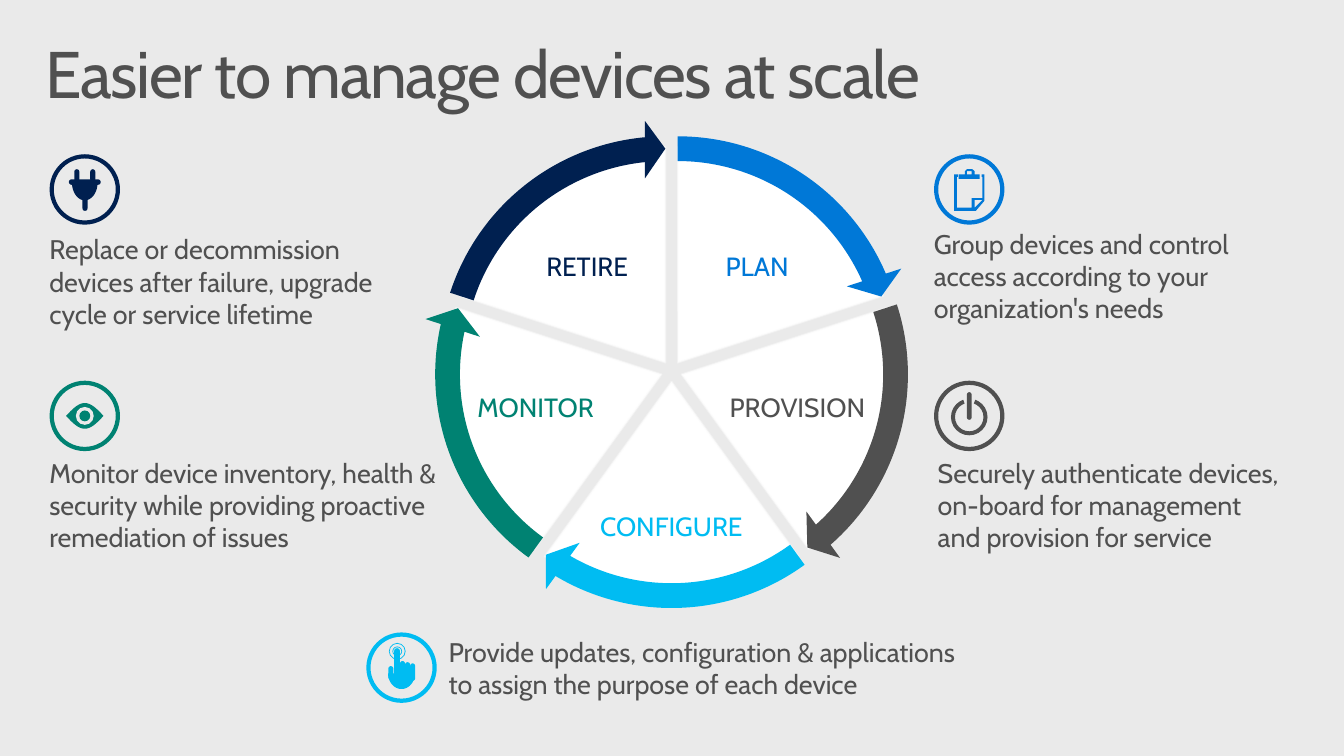
from math import cos, pi, radians, sin

from lxml import etree
from pptx import Presentation, util as u
from pptx.dml.color import RGBColor
from pptx.enum import shapes, text
from pptx.oxml.ns import qn

SHAPE = shapes.MSO_SHAPE
FONT = "Cabin"
BACK, GREY, BLUE, SKY, TEAL, NAVY = (
    "EAEAEA", "505050", "0078D7", "00BCF2", "008272", "002050")

HUB = (17.26, 9.54)
STEP = 72       # degrees per stage
HEAD = 5.46     # degrees taken by an arrowhead
DEG = 0.6       # one degree as an adjustment value

# Stage, colour, label box (cm), clockwise from the top
STAGES = [
    ("plan", BLUE, (17.15, 6.3, 4.62, 1.09)),
    ("provision", GREY, (18.36, 9.86, 4.27, 1.19)),
    ("configure", SKY, (15.21, 12.85, 4.09, 1.32)),
    ("monitor", TEAL, (11.63, 9.86, 4.27, 1.19)),
    ("retire", NAVY, (12.78, 6.3, 4.62, 1.09)),
]
NOTES = [
    ("Group devices and control access according to your organization's needs",
     (24, 5.84, 9.07, 2.51)),
    ("Securely authenticate devices, on-board for management and provision for service",
     (24.1, 11.73, 8.97, 2.51)),
    ("Provide updates, configuration & applications to assign the purpose of each device",
     (11.53, 16.33, 13.59, 1.68)),
    ("Monitor device inventory, health & security while providing proactive "
     "remediation of issues", (1.27, 11.73, 10.03, 2.51)),
    ("Replace or decommission devices after failure, upgrade cycle or service lifetime",
     (1.27, 5.99, 9.6, 2.51)),
]


def rgb(value):
    return RGBColor.from_string(value)


def paint(sp, color):
    sp.shadow.inherit = False
    sp.fill.solid()
    sp.fill.fore_color.rgb = rgb(color)
    sp.line.fill.background()
    return sp


def add_text(s, words, box, size=19.6, color=GREY, inset=(0, 0), align=None,
             anchor=text.MSO_ANCHOR.TOP, spacing=None, **run_attrs):
    tf = s.shapes.add_textbox(*map(u.Cm, box)).text_frame
    tf.word_wrap = True
    tf.vertical_anchor = anchor
    tf.margin_left = tf.margin_right = u.Cm(inset[0])
    tf.margin_top = tf.margin_bottom = u.Cm(inset[1])
    p = tf.paragraphs[0]
    p.alignment = align
    p.line_spacing = spacing
    r = p.add_run()
    r.text = words
    r.font.name = FONT
    r.font.size = u.Pt(size)
    r.font.color.rgb = rgb(color)
    for key, value in run_attrs.items():
        r.font._element.set(key, value)


def add_preset(s, kind, box, color, adj=()):
    sp = s.shapes.add_shape(kind, *map(u.Cm, box))
    for i, value in enumerate(adj):
        sp.adjustments[i] = value
    return paint(sp, color)


def add_round(s, kind, x, y, size, color, adj=()):
    """Preset shape of equal sides centred on x, y."""
    return add_preset(s, kind, (x - size / 2, y - size / 2, size, size), color, adj)


def add_bar(s, x, y, w, h, color):
    add_preset(s, SHAPE.ROUNDED_RECTANGLE, (x, y, w, h), color, [0.5])


def add_outline(s, x, y, color, *contours):
    """Closed contours, with points relative to x, y; inner ones are holes."""
    fb = None
    for contour in contours:
        pts = [(u.Cm(x + dx), u.Cm(y + dy)) for dx, dy in contour]
        if fb is None:
            fb = s.shapes.build_freeform(*pts[0], scale=1.0)
        else:
            fb.move_to(*pts[0])
        fb.add_line_segments(pts[1:], close=True)
    paint(fb.convert_to_shape(), color)


def add_bowl(s, x, y, w, h, color):
    """Lower half of an ellipse, with its flat top centred on x, y."""
    angles = [pi * i / 24 for i in range(25)]
    add_outline(s, x, y, color, [(w / 2 * cos(a), h * sin(a)) for a in angles])


def draw_plug(s, x, y, color):
    for dx in (-0.27, 0.14):
        add_bar(s, x + dx, y - 0.52, 0.13, 0.33, color)
    add_bar(s, x - 0.41, y - 0.26, 0.82, 0.14, color)
    add_bowl(s, x, y - 0.18, 0.66, 0.46, color)
    add_bar(s, x - 0.06, y + 0.2, 0.13, 0.35, color)


def draw_eye(s, x, y, color):
    turns = [2 * pi * i / 48 for i in range(48)]
    lid = [(-0.48 + 0.96 * (t / pi if t <= pi else 2 - t / pi), -0.33 * sin(t))
           for t in turns]
    add_outline(s, x, y, color, lid)
    add_round(s, SHAPE.OVAL, x, y, 0.46, BACK)
    add_round(s, SHAPE.OVAL, x, y, 0.28, color)


def draw_power(s, x, y, color):
    add_round(s, SHAPE.BLOCK_ARC, x, y + 0.03, 0.94, color,
              [289 * DEG, 251 * DEG, 0.11])
    add_bar(s, x - 0.06, y - 0.61, 0.12, 0.71, color)


def draw_hand(s, x, y, color):
    for size in (0.25, 0.43):
        add_round(s, SHAPE.DONUT, x - 0.11, y - 0.42, size, color, [0.02 / size])
    add_bar(s, x - 0.19, y - 0.5, 0.15, 0.85, color)
    for i in range(3):
        add_bar(s, x - 0.04 + 0.13 * i, y - 0.17 + 0.03 * i, 0.13, 0.45, color)
    add_bar(s, x - 0.34, y - 0.04, 0.13, 0.35, color)
    add_bowl(s, x, y + 0.15, 0.69, 0.4, color)


def draw_clipboard(s, x, y, color):
    board = [(0.39, -0.39), (0.32, -0.39), (0.32, -0.32), (0.34, -0.32),
             (0.34, 0.22), (0.06, 0.22), (0.06, 0.47), (-0.32, 0.47),
             (-0.32, -0.32), (-0.29, -0.32), (-0.29, -0.39), (-0.39, -0.39),
             (-0.39, 0.55), (0.17, 0.55), (0.39, 0.29)]
    fold = [(0.14, 0.47), (0.14, 0.27), (0.34, 0.27)]
    clip = [(0.27, -0.39), (0.14, -0.39), (0.14, -0.47), (0.08, -0.52),
            (-0.06, -0.52), (-0.11, -0.47), (-0.11, -0.39), (-0.27, -0.39),
            (-0.27, -0.27), (0.27, -0.27)]
    slot = [(0.06, -0.39), (-0.06, -0.39), (-0.06, -0.47), (0.06, -0.47)]
    add_outline(s, x, y, color, board, fold)
    add_outline(s, x, y, color, clip, slot)


def add_icon(s, draw, x, y, color):
    add_round(s, SHAPE.DONUT, x, y, 1.81, color, [0.06])
    draw(s, x, y, color)


def add_wheel(s):
    wedges = []
    for i, stage in enumerate(STAGES):
        start = (270 + STEP * i) % 360
        middle = radians(start + STEP / 2)
        x, y = HUB[0] + 0.27 * cos(middle), HUB[1] + 0.27 * sin(middle)
        wedges.append((x, y, start, *stage))

    # White slices with their labels
    for x, y, start, name, color, box in wedges:
        end = (start + STEP) % 360
        sp = add_round(s, SHAPE.PIE, x, y, 11.1, "FFFFFF", [start * DEG, end * DEG])
        sp.line.color.rgb = rgb("F9F9F9")
        sp.line.width = u.Pt(1.35)
        clr = sp.line._ln.find(".//" + qn("a:srgbClr"))
        etree.SubElement(clr, qn("a:alpha")).set("val", "50000")
        add_text(s, name, box, size=24, color=color, inset=(0.08, 0.08),
                 align=text.PP_ALIGN.CENTER, anchor=text.MSO_ANCHOR.MIDDLE,
                 spacing=0.9, cap="small")

    # Arrows around the rim
    for x, y, start, name, color, box in wedges:
        tip = (start + STEP - HEAD) % 360
        add_round(s, SHAPE.CIRCULAR_ARROW, x, y, 12.47, color,
                  [0.051, HEAD * DEG, tip * DEG, start * DEG, 0.059])


def main():
    prs = Presentation()
    prs.slide_width, prs.slide_height = u.Cm(34.54), u.Cm(19.43)
    s = prs.slides.add_slide(prs.slide_layouts[6])
    s.background.fill.solid()
    s.background.fill.fore_color.rgb = rgb(BACK)

    # Title and descriptions
    add_text(s, "Easier to manage devices at scale", (0.76, 0.81, 33.02, 2.54),
             size=48, inset=(0.41, 0.25), spacing=0.9, spc="-100")
    for words, box in NOTES:
        add_text(s, words, box)

    # Life cycle and its icons
    add_wheel(s)
    add_icon(s, draw_clipboard, 24.91, 4.87, BLUE)
    add_icon(s, draw_power, 24.91, 10.69, GREY)
    add_icon(s, draw_hand, 10.32, 17.16, SKY)
    add_icon(s, draw_eye, 2.18, 10.69, TEAL)
    add_icon(s, draw_plug, 2.18, 4.87, NAVY)

    prs.save("out.pptx")


if __name__ == "__main__":
    main()
